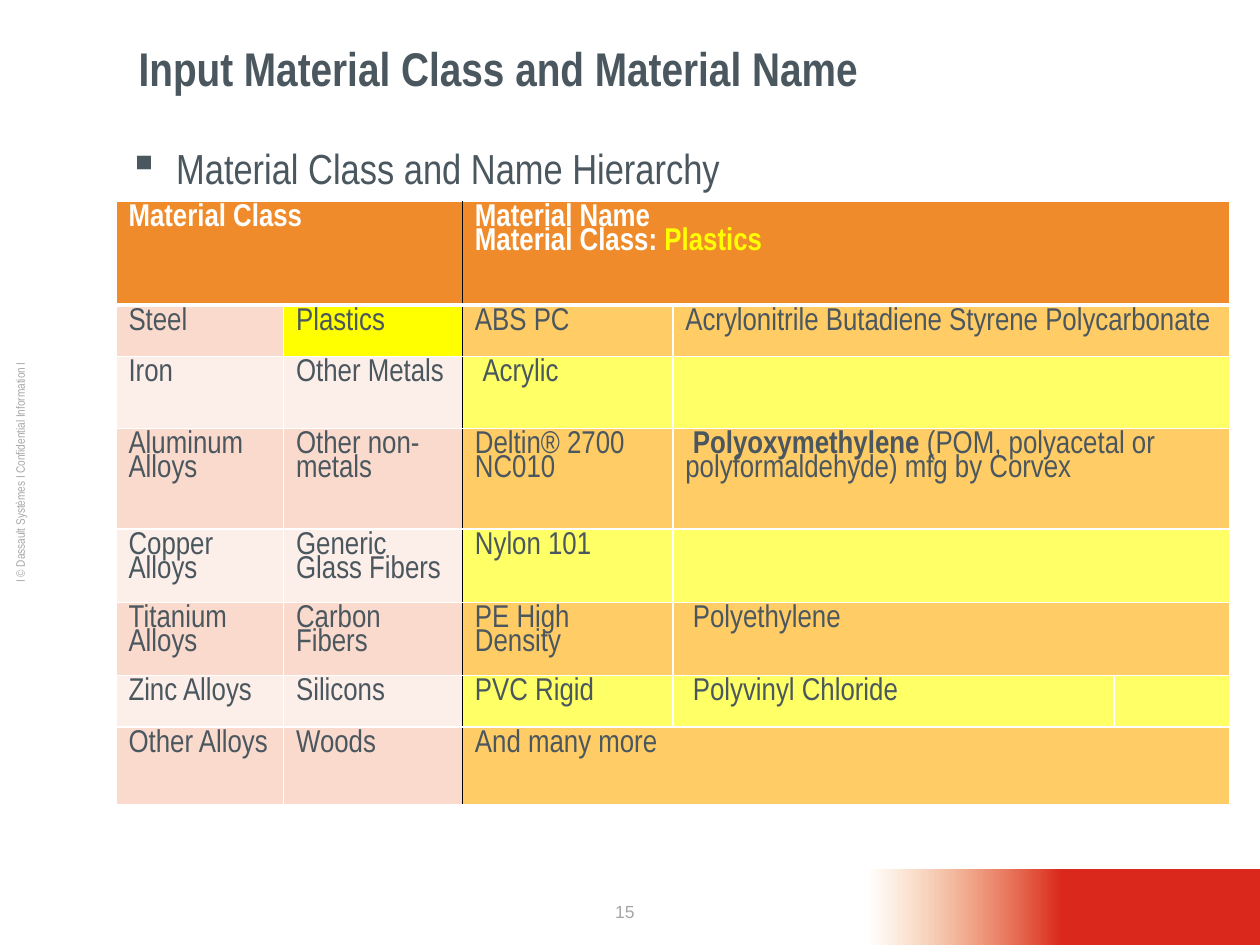
from lxml import etree
from pptx import Presentation
from pptx import util as u
from pptx.dml.color import RGBColor
from pptx.enum import shapes, text
from pptx.oxml import ns

COLORS = {
    "ink": "4B575F", "muted": "A6A6A6", "white": "FFFFFF", "black": "000000",
    "orange": "EF8B2B", "red": "DA291C", "highlight": "FFFF00",
    "class_dark": "F9DACD", "class_light": "FCEEE8",
    "name_dark": "FFCC66", "name_light": "FFFF66",
}
NARROW = "Arial Narrow"
COLUMN_WIDTHS = [1.33, 1.42, 1.67, 3.5, 0.92]
ROW_HEIGHTS = [0.82, 0.41, 0.57, 0.8, 0.57, 0.57, 0.41, 0.62]
MATERIALS = [
    ("Steel", "Plastics", "ABS PC", "Acrylonitrile Butadiene Styrene Polycarbonate"),
    ("Iron", "Other Metals", "Acrylic", ""),
    ("Aluminum Alloys", "Other non-metals", "Deltin® 2700 NC010", ""),
    ("Copper Alloys", "Generic Glass Fibers", "Nylon 101", ""),
    ("Titanium Alloys", "Carbon Fibers", "PE High Density", "Polyethylene"),
    ("Zinc Alloys", "Silicons", "PVC Rigid", "Polyvinyl Chloride"),
    ("Other Alloys", "Woods", "And many more", ""),
]
INDENTED = {"Acrylic", "Polyethylene", "Polyvinyl Chloride"}


def rgb(name):
    return RGBColor.from_string(COLORS[name])


class SlideBuilder:
    def __init__(self, deck):
        self.slide = deck.slides.add_slide(deck.slide_layouts[5])

    def add_runs(self, paragraph, runs, size, font=NARROW):
        for words, color, bold in runs:
            run = paragraph.add_run()
            run.text = words
            run.font.name = font
            run.font.size = u.Pt(size)
            run.font.bold = bold
            run.font.color.rgb = rgb(color)

    def title(self, words, left, top, width, height):
        heading = self.slide.shapes.title
        heading.left, heading.top = u.Inches(left), u.Inches(top)
        heading.width, heading.height = u.Inches(width), u.Inches(height)
        frame = heading.text_frame
        frame.auto_size = text.MSO_AUTO_SIZE.NONE
        frame.vertical_anchor = text.MSO_ANCHOR.MIDDLE
        frame.paragraphs[0].alignment = text.PP_ALIGN.LEFT
        self.add_runs(frame.paragraphs[0], [(words, "ink", True)], 27)

    def label(self, words, left, top, width, height, size, color="muted",
              font=NARROW, align=text.PP_ALIGN.CENTER, rotation=0, bullet=None):
        box = self.slide.shapes.add_textbox(
            u.Inches(left), u.Inches(top), u.Inches(width), u.Inches(height))
        box.rotation = rotation
        box.text_frame.word_wrap = True
        paragraph = box.text_frame.paragraphs[0]
        paragraph.alignment = align
        if bullet:
            properties = paragraph._p.get_or_add_pPr()
            properties.set("marL", str(u.Inches(0.38)))
            properties.set("indent", str(u.Inches(-0.38)))
            etree.SubElement(properties, ns.qn("a:buChar"), char=bullet)
        self.add_runs(paragraph, [(words, color, False)], size, font)

    def fading_band(self, left, top, width, height):
        band = self.slide.shapes.add_shape(
            shapes.MSO_SHAPE.RECTANGLE,
            u.Inches(left), u.Inches(top), u.Inches(width), u.Inches(height))
        band.shadow.inherit = False
        band.line.fill.background()
        band.fill.gradient()
        band.fill.gradient_angle = 180
        solid, clear = band.fill.gradient_stops
        solid.position, clear.position = 0.51, 1
        solid.color.rgb, clear.color.rgb = rgb("red"), rgb("orange")
        clear_color = band._element.spPr.findall(".//" + ns.qn("a:srgbClr"))[-1]
        etree.SubElement(clear_color, ns.qn("a:alpha"), val="0")

    def table(self, left, top):
        grid = self.slide.shapes.add_table(
            len(ROW_HEIGHTS), len(COLUMN_WIDTHS), u.Inches(left), u.Inches(top),
            u.Inches(sum(COLUMN_WIDTHS)), u.Inches(sum(ROW_HEIGHTS))).table
        for column, width in zip(grid.columns, COLUMN_WIDTHS):
            column.width = u.Inches(width)
        for row, height in zip(grid.rows, ROW_HEIGHTS):
            row.height = u.Inches(height)
        return grid

    def cell_style(self, cell, fill, borders):
        properties = cell._tc.get_or_add_tcPr()
        for side, (color, width) in borders.items():
            line = etree.SubElement(properties, ns.qn("a:ln" + side), w=str(u.Pt(width)))
            solid = etree.SubElement(line, ns.qn("a:solidFill"))
            etree.SubElement(solid, ns.qn("a:srgbClr"), val=COLORS[color])
        cell.fill.solid()
        cell.fill.fore_color.rgb = rgb(fill)

    def cell_text(self, cell, lines, indented=False):
        frame = cell.text_frame
        for index, runs in enumerate(lines):
            paragraph = frame.add_paragraph() if index else frame.paragraphs[0]
            paragraph.line_spacing = 0.8
            if indented:
                paragraph._p.get_or_add_pPr().set("indent", str(u.Inches(0.06)))
            self.add_runs(paragraph, runs, 18)


def fill_for(row, column):
    if row == 0:
        return "orange"
    if (row, column) == (1, 1):
        return "highlight"
    group = "class" if column < 2 else "name"
    return f"{group}_{'dark' if row % 2 else 'light'}"


def borders_for(row, column):
    return {
        "L": ("black" if column == 2 else "white", 1),
        "R": ("black" if column == 1 or (row, column) == (0, 0) else "white", 1),
        "T": ("white", 3 if row == 1 else 1),
        "B": ("white", 3 if row == 0 else 1),
    }


def build_materials(builder):
    grid = builder.table(0.92, 1.6)
    last_row = len(MATERIALS)
    for row in range(last_row + 1):
        for column in range(len(COLUMN_WIDTHS)):
            builder.cell_style(grid.cell(row, column), fill_for(row, column),
                               borders_for(row, column))

    grid.cell(0, 0).merge(grid.cell(0, 1))
    for row in (0, last_row):
        grid.cell(row, 2).merge(grid.cell(row, 4))
    for row in range(1, last_row - 1):
        grid.cell(row, 3).merge(grid.cell(row, 4))

    builder.cell_text(grid.cell(0, 0), [[("Material Class", "white", True)]])
    builder.cell_text(grid.cell(0, 2), [
        [("Material Name", "white", True)],
        [("Material Class: ", "white", True), ("Plastics", "highlight", True)],
    ])
    for row, entries in enumerate(MATERIALS, 1):
        for column, words in enumerate(entries):
            if words:
                builder.cell_text(grid.cell(row, column), [[(words, "ink", False)]],
                                  words in INDENTED)
    builder.cell_text(grid.cell(3, 3), [[
        ("Polyoxymethylene", "ink", True),
        (" (POM, polyacetal or polyformaldehyde) mfg by Corvex", "ink", False),
    ]], True)


def main():
    deck = Presentation()
    deck.slide_width, deck.slide_height = u.Inches(10), u.Inches(7.5)
    builder = SlideBuilder(deck)
    builder.label("15", 4.58, 7.1, 0.76, 0.4, 10, font="Arial")
    builder.label("Ι © Dassault Systèmes Ι Confidential Information Ι",
                  -3.59, 3.64, 7.5, 0.22, 7, rotation=270)
    builder.fading_band(6.9, 6.9, 3.11, 0.62)
    builder.title("Input Material Class and Material Name", 1, 0.29, 9, 0.5)
    builder.label("Material Class and Name Hierarchy", 0.92, 1.08, 8.67, 4.95, 24,
                  color="ink", align=text.PP_ALIGN.LEFT, bullet="▪")
    build_materials(builder)
    deck.save("out.pptx")


if __name__ == "__main__":
    main()
